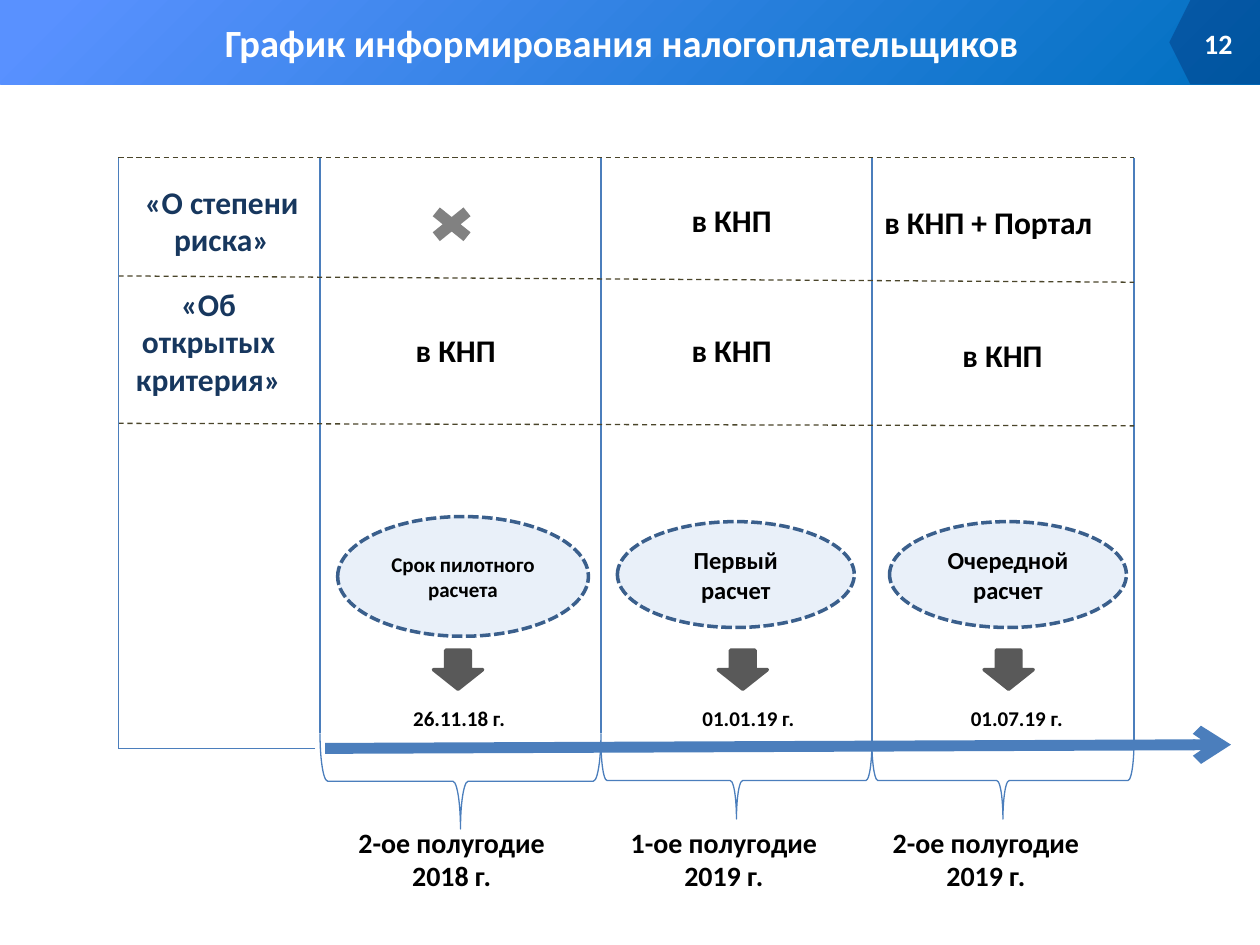
from lxml import etree
from pptx import Presentation
from pptx.dml.color import RGBColor
from pptx.enum.dml import MSO_LINE
from pptx.enum.shapes import MSO_CONNECTOR, MSO_SHAPE
from pptx.enum.text import MSO_ANCHOR, PP_ALIGN
from pptx.oxml.ns import qn
from pptx.util import Inches, Pt

STRAIGHT = MSO_CONNECTOR.STRAIGHT
DASH, SHORT_DASH = MSO_LINE.DASH, MSO_LINE.SQUARE_DOT
LEFT, CENTER, RIGHT = PP_ALIGN.LEFT, PP_ALIGN.CENTER, PP_ALIGN.RIGHT
TOP, MIDDLE = MSO_ANCHOR.TOP, MSO_ANCHOR.MIDDLE

COLORS = {
    "grid": "4B7EBC", "row": "4A452A", "label": "17375E", "text": "000000",
    "white": "FFFFFF", "stage": "8EB4E3", "stage_edge": "3A5F8C",
    "arrow": "595959", "cross": "404040", "bar_start": "5991FF",
    "bar_end": "0070C0", "badge": "002060",
}
FONT = "Calibri"
WIDTH, HEIGHT, BAR_HEIGHT = 10, 7.5, 0.67
GRID_LEFT, GRID_TOP, AXIS_Y = 0.94, 1.25, 5.94
COLUMN_EDGES = [2.54, 4.77, 6.92, 9]
GRID_RIGHT = COLUMN_EDGES[-1]
ROW_LINES = [(1.25, 1.25), (2.19, 2.24), (3.36, 3.38)]

PERIODS = [
    {"name": "2-ое полугодие 2018 г.", "name_left": 2.68,
     "brace": (5.82, 0.76), "stage": "Срок пилотного расчета",
     "oval": (2.68, 4.1, 1.99, 0.95), "size": 12,
     "date": "26.11.18 г.", "date_box": (2.81, 1.67), "arrow_left": 3.44},
    {"name": "1-ое полугодие 2019 г.", "name_left": 4.84,
     "brace": (5.89, 0.61), "stage": "Первый расчет",
     "oval": (4.9, 4.14, 1.88, 0.84), "size": 14,
     "date": "01.01.19 г.", "date_box": (5, 1.88), "arrow_left": 5.7},
    {"name": "2-ое полугодие 2019 г.", "name_left": 6.92,
     "brace": (5.89, 0.61), "stage": "Очередной расчет",
     "oval": (7.06, 4.14, 1.88, 0.84), "size": 14,
     "date": "01.07.19 г.", "date_box": (7.27, 1.6), "arrow_left": 7.81},
]
CHANNELS = [
    ("в КНП", 5.39, 1.55, 0.92),
    ("в КНП + Портал", 6.92, 1.56, 2.27),
    ("в КНП", 3.2, 2.58, 0.92),
    ("в КНП", 5.39, 2.58, 0.92),
    ("в КНП", 7.54, 2.62, 0.92),
]


def color(name):
    return RGBColor.from_string(COLORS[name])


def write(holder, text, size, ink="text", align=CENTER, anchor=TOP):
    frame = holder.text_frame
    frame.text = text
    frame.word_wrap = True
    frame.vertical_anchor = anchor
    paragraph = frame.paragraphs[0]
    paragraph.alignment = align
    font = paragraph.font
    font.name, font.size, font.bold = FONT, Pt(size), True
    font.color.rgb = color(ink)


def add_label(slide, box, text, size, **style):
    label = slide.shapes.add_textbox(*map(Inches, box))
    write(label, text, size, **style)


def add_line(slide, start, end, ink="grid", width=0.75, dash=None):
    line = slide.shapes.add_connector(STRAIGHT, *map(Inches, start + end))
    line.line.color.rgb = color(ink)
    line.line.width = Pt(width)
    if dash:
        line.line.dash_style = dash
    etree.SubElement(line._element.spPr, qn("a:effectLst"))
    return line


def add_shape(slide, kind, box, fill=None, opacity=None, edge=None, width=2):
    shape = slide.shapes.add_shape(kind, *map(Inches, box))
    shape.shadow.inherit = False
    if fill:
        shape.fill.solid()
        shape.fill.fore_color.rgb = color(fill)
    else:
        shape.fill.background()
    if opacity:
        tint = shape._element.spPr.find(qn("a:solidFill"))[0]
        etree.SubElement(tint, qn("a:alpha")).set("val", str(opacity * 1000))
    if edge:
        shape.line.color.rgb = color(edge)
        shape.line.width = Pt(width)
    else:
        shape.line.fill.background()
    return shape


def add_time_axis(slide):
    axis = add_line(slide, (2.58, AXIS_Y), (9.77, 5.91), width=6.25)
    outline = axis.line._get_or_add_ln()
    etree.SubElement(outline, qn("a:tailEnd")).set("type", "arrow")


def add_grid(slide):
    for edge, bottom in zip(COLUMN_EDGES, (5.82, 5.82, 5.89, 5.89)):
        add_line(slide, (edge, bottom), (edge, GRID_TOP))
    for left_y, right_y in ROW_LINES:
        add_line(slide, (GRID_LEFT, left_y), (GRID_RIGHT, right_y), "row", dash=DASH)
    add_line(slide, (GRID_LEFT, AXIS_Y), (GRID_LEFT, GRID_TOP))
    add_line(slide, (2.5, AXIS_Y), (GRID_LEFT, AXIS_Y))


def add_brace(slide, left, right, top, depth):
    span = right - left
    box = ((left + right - depth) / 2, top + (depth - span) / 2, depth, span)
    brace = add_shape(slide, MSO_SHAPE.LEFT_BRACE, box, edge="grid", width=0.75)
    brace.rotation = 270
    brace.adjustments[0], brace.adjustments[1] = 0.08, 0.5


def add_period(slide, period, left, right):
    add_brace(slide, left, right, *period["brace"])
    add_label(slide, (period["name_left"], 6.5, 1.81, 0.64), period["name"], 16)
    date_left, date_width = period["date_box"]
    add_label(slide, (date_left, 5.55, date_width, 0.3), period["date"], 12)
    stage = add_shape(slide, MSO_SHAPE.OVAL, period["oval"], "stage", 19, "stage_edge")
    stage.line.dash_style = SHORT_DASH
    write(stage, period["stage"], period["size"], anchor=MIDDLE)
    add_shape(slide, MSO_SHAPE.DOWN_ARROW, (period["arrow_left"], 5.16, 0.39, 0.31),
              "arrow", edge="arrow")


def add_header(slide):
    bar = add_shape(slide, MSO_SHAPE.RECTANGLE, (0, 0, WIDTH, BAR_HEIGHT))
    bar.fill.gradient()
    bar.fill.gradient_angle = 315
    stops = zip(bar.fill.gradient_stops, (0.04, 1), ("bar_start", "bar_end"))
    for stop, position, ink in stops:
        stop.position = position
        stop.color.rgb = color(ink)
    badge = add_shape(slide, MSO_SHAPE.PENTAGON, (9.28, 0, 0.72, BAR_HEIGHT), "badge", 33)
    badge.rotation = 180
    badge.adjustments[0] = 0.25
    add_label(slide, (9.34, 0.19, 0.54, 0.3), "12", 16, ink="white",
              align=RIGHT, anchor=MIDDLE)
    title = slide.shapes.title
    title.left, title.top, title.width, title.height = map(Inches, (0.78, 0.1, 8.31, 0.47))
    write(title, "График информирования налогоплательщиков", 22, ink="white")
    slide.shapes._spTree.append(title._element)


def main():
    deck = Presentation()
    deck.slide_width, deck.slide_height = Inches(WIDTH), Inches(HEIGHT)
    slide = deck.slides.add_slide(deck.slide_layouts[5])
    add_time_axis(slide)
    add_grid(slide)
    for period, left, right in zip(PERIODS, COLUMN_EDGES, COLUMN_EDGES[1:]):
        add_period(slide, period, left, right)
    for text, left, top, width in CHANNELS:
        add_label(slide, (left, top, width, 0.4), text, 18, align=LEFT)
    add_label(slide, (0.82, 2.21, 1.67, 1.01), "«Об открытых критерия»", 18, ink="label")
    add_label(slide, (0.96, 1.4, 1.6, 0.71), "«О степени риска»", 18, ink="label")
    add_shape(slide, MSO_SHAPE.MATH_MULTIPLY, (3.35, 1.59, 0.47, 0.38), "cross", 66)
    add_header(slide)
    deck.save("out.pptx")


if __name__ == "__main__":
    main()
